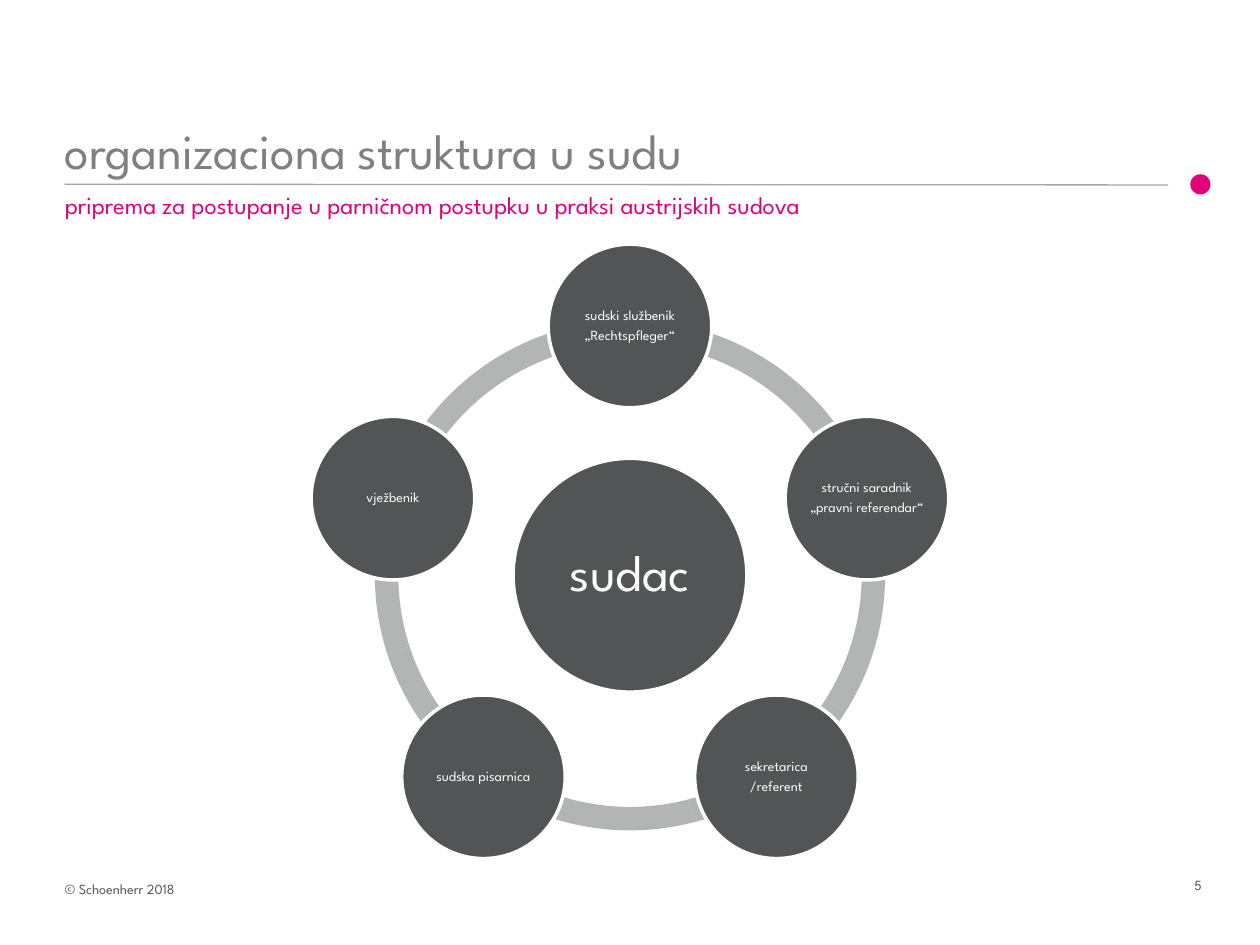
"""Build a slide showing the people around a judge as a ring of circles."""
import math

import pptx
import pptx.chart.data
import pptx.dml.color
import pptx.enum.shapes
import pptx.enum.text
import pptx.oxml
import pptx.util

Pt = pptx.util.Pt
RGBColor = pptx.dml.color.RGBColor
MSO_SHAPE = pptx.enum.shapes.MSO_SHAPE
MSO_ANCHOR = pptx.enum.text.MSO_ANCHOR
PP_ALIGN = pptx.enum.text.PP_ALIGN

FONT = "League Spartan"
DARK = RGBColor(0x53, 0x54, 0x55)
TITLE_GREY = RGBColor(0x80, 0x80, 0x80)
RING_GREY = RGBColor(0xB3, 0xB4, 0xB4)
RULE_GREY = RGBColor(0xA6, 0xA6, 0xA6)
DOT_PINK = RGBColor(0xE2, 0x00, 0x7A)
TEXT_PINK = RGBColor(0xE2, 0x00, 0x78)
WHITE = RGBColor(0xFF, 0xFF, 0xFF)


def write(tf, text, size=8, color=DARK, align=PP_ALIGN.LEFT,
          anchor=MSO_ANCHOR.TOP, wrap=True, margin=None, line=None, after=None):
    tf.word_wrap = wrap
    tf.vertical_anchor = anchor
    if margin is not None:
        tf.margin_left = tf.margin_right = Pt(margin)
        tf.margin_top = tf.margin_bottom = Pt(margin)
    for i, part in enumerate(text.split("\n")):
        p = tf.paragraphs[0] if i == 0 else tf.add_paragraph()
        p.alignment = align
        p.line_spacing = line
        p.space_after = after
        r = p.add_run()
        r.text = part
        r.font.name = FONT
        r.font.size = Pt(size)
        r.font.color.rgb = color


def add_filled(kind, left, top, size, fill):
    sp = s.shapes.add_shape(kind, Pt(left), Pt(top), Pt(size), Pt(size))
    sp.shadow.inherit = False
    sp.fill.solid()
    sp.fill.fore_color.rgb = fill
    sp.line.fill.background()
    return sp


prs = pptx.Presentation()
prs.slide_width, prs.slide_height = Pt(720), Pt(540)
s = prs.slides.add_slide(prs.slide_layouts[6])

rule = s.shapes.add_connector(pptx.enum.shapes.MSO_CONNECTOR.STRAIGHT,
                              Pt(37), Pt(105.3), Pt(667.5), Pt(105.7))
rule.line.color.rgb = RULE_GREY
rule.line.width = Pt(0.75)
rule._element.spPr.append(pptx.oxml.parse_xml(
    '<a:effectLst xmlns:a="http://schemas.openxmlformats.org/drawingml/2006/main"/>'))
add_filled(MSO_SHAPE.OVAL, 680.2, 99.6, 11.5, DOT_PINK)

for text, left, top, width, height, style in [
    ("5", 675.4, 497.5, 33.8, 17, dict(wrap=False)),
    ("© Schoenherr 2018", 30, 499.7, 158.4, 17, {}),
    ("organizaciona struktura u sudu", 30, 66.2, 638, 39.6,
     dict(size=28, color=TITLE_GREY, anchor=MSO_ANCHOR.BOTTOM)),
    ("priprema za postupanje u parničnom postupku u praksi austrijskih sudova",
     30, 105.1, 584, 33.8, dict(size=14, color=TEXT_PINK)),
]:
    sp = s.shapes.add_textbox(Pt(left), Pt(top), Pt(width), Pt(height))
    write(sp.text_frame, text, **style)

CX, CY = 360, 328.7
RING, ORBIT = 291.6, 142.4
marks = [32.4, 75.6, 118.8, 162, 205.2]
for i in (2, 1, 0, 4, 3):
    sp = add_filled(MSO_SHAPE.BLOCK_ARC, CX - RING / 2, CY - RING / 2, RING, RING_GREY)
    sp.adjustments[0] = marks[i] * 0.6
    sp.adjustments[1] = marks[(i + 1) % len(marks)] * 0.6
    sp.adjustments[2] = 0.046

circles = [("sudac", CX, CY, 133.6, 29, 2.9)]
roles = ["sudski službenik\n„Rechtspfleger“", "stručni saradnik\n„pravni referendar“",
         "sekretarica\n/referent", "sudska pisarnica", "vježbenik"]
for i, role in enumerate(roles):
    angle = math.radians(360 / len(roles) * i - 90)
    circles.append((role, CX + ORBIT * math.cos(angle), CY + ORBIT * math.sin(angle),
                    93.5, 8, 0.7))

for text, x, y, diameter, size, margin in circles:
    sp = add_filled(MSO_SHAPE.OVAL, x - diameter / 2, y - diameter / 2, diameter, DARK)
    sp.line.color.rgb = WHITE
    sp.line.width = Pt(2)
    write(sp.text_frame, text, size=size, color=WHITE, align=PP_ALIGN.CENTER,
          anchor=MSO_ANCHOR.MIDDLE, wrap=False, margin=margin, line=0.9,
          after=Pt(size * 0.35))

prs.save("out.pptx")
